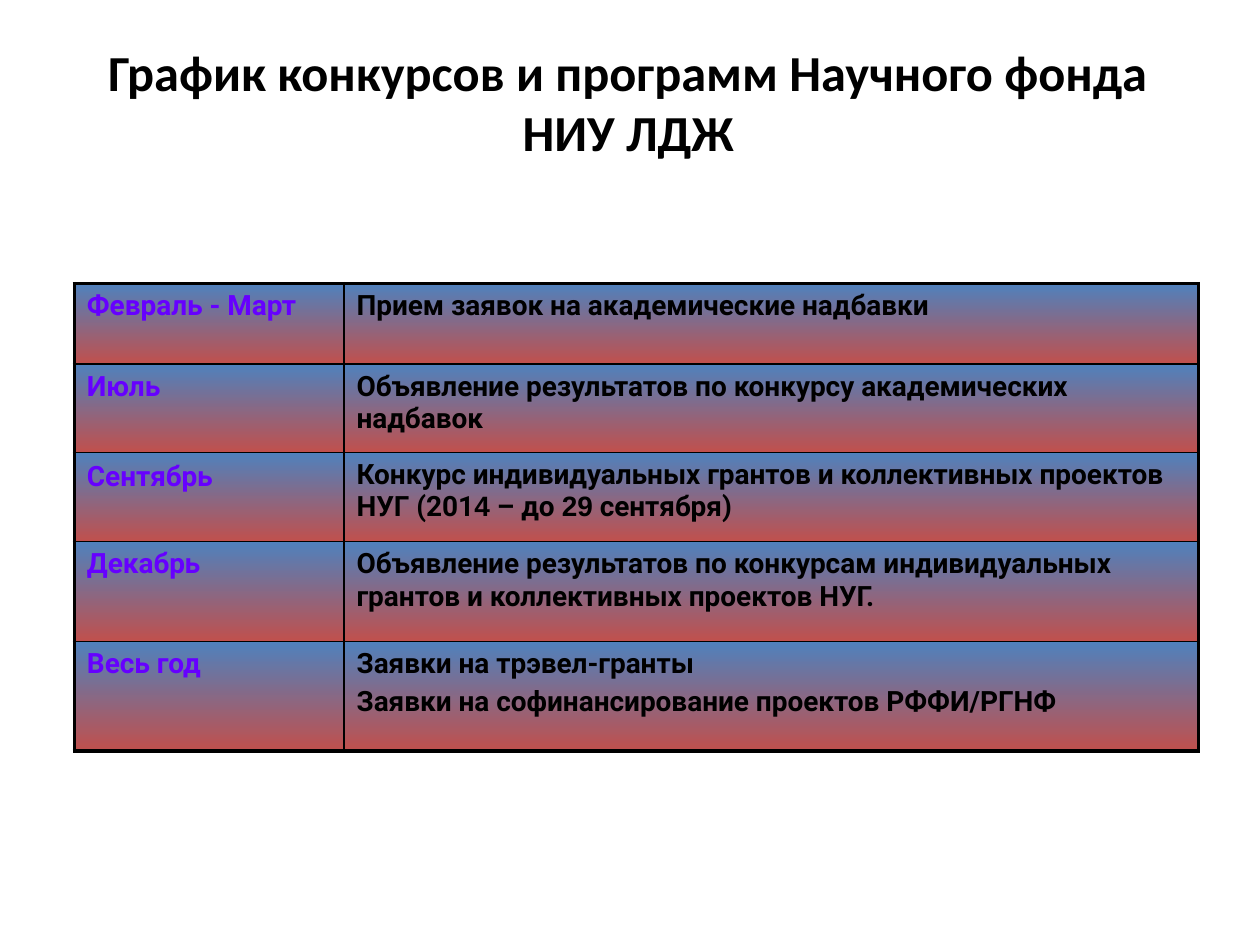
from lxml.etree import SubElement
from pptx import Presentation
from pptx.dml.color import RGBColor
from pptx.enum.text import MSO_ANCHOR, PP_ALIGN
from pptx.oxml.ns import qn
from pptx.util import Inches, Pt

BLACK = RGBColor(0x00, 0x00, 0x00)
VIOLET = RGBColor(0x66, 0x00, 0xFF)
BLUE = RGBColor(0x4F, 0x81, 0xBD)
RED = RGBColor(0xC0, 0x50, 0x4D)

TITLE = "График конкурсов и программ Научного фонда НИУ ЛДЖ"
TITLE_FONT = {"name": "Calibri", "size": Pt(28.8), "bold": True}
CELL_FONT = {"name": "Roboto", "size": Pt(16), "bold": True}
COLUMNS = (2.14, 6.78)
ROWS = (0.64, 0.7, 0.71, 0.79, 0.87)
THIN, THICK = Pt(1), Pt(2.25)

# Each row: period, then paragraphs; a paragraph is a list of (text, font name) runs
SCHEDULE = [
    ("Февраль - Март", [[("Прием заявок на академические надбавки", "Roboto")]]),
    ("Июль", [[("Объявление результатов по конкурсу академических надбавок", "Roboto")]]),
    ("Сентябрь", [[
        ("Конкурс индивидуальных грантов и коллективных проектов НУГ (201", "Roboto"),
        ("4", "Arial"), (" – до ", "Roboto"), ("29", "Arial"), (" сентября)", "Roboto"),
    ]]),
    ("Декабрь", [[("Объявление результатов по конкурсам индивидуальных грантов "
                   "и коллективных проектов НУГ.", "Roboto")]]),
    ("Весь год", [[("Заявки на трэвел-гранты", "Roboto")],
                  [("Заявки на софинансирование проектов РФФИ/РГНФ", "Roboto")]]),
]


def add_run(p, text, color, fmt):
    r = p.add_run()
    r.text = text
    for name, value in fmt.items():
        setattr(r.font, name, value)
    r.font.color.rgb = color


def add_title(slide):
    tf = slide.shapes.add_textbox(Inches(0.6), Inches(0.33), Inches(8.77), Inches(0.95)).text_frame
    tf.word_wrap = True
    tf.vertical_anchor = MSO_ANCHOR.MIDDLE
    p = tf.paragraphs[0]
    p.alignment = PP_ALIGN.CENTER
    add_run(p, TITLE, BLACK, TITLE_FONT)


def set_borders(cell, widths):
    """Draw black cell borders; widths maps the side letters L, R, T, B to line widths."""
    tc_pr = cell._tc.get_or_add_tcPr()
    for side, width in widths.items():
        ln = SubElement(tc_pr, qn(f"a:ln{side}"), w=str(width))
        fill = SubElement(ln, qn("a:solidFill"))
        SubElement(fill, qn("a:srgbClr"), val=str(BLACK))


def fill_gradient(cell):
    cell.fill.gradient()
    cell.fill.gradient_angle = 270
    for stop, (position, color) in zip(cell.fill.gradient_stops, ((0, BLUE), (1, RED))):
        stop.position = position
        stop.color.rgb = color


def write_cell(cell, paragraphs, color):
    tf = cell.text_frame
    for i, runs in enumerate(paragraphs):
        p = tf.add_paragraph() if i else tf.paragraphs[0]
        p.space_before = Pt(3.2)
        for text, font in runs:
            add_run(p, text, color, CELL_FONT | {"name": font})
    return tf


def add_schedule(slide):
    last_row, last_col = len(ROWS) - 1, len(COLUMNS) - 1
    table = slide.shapes.add_table(
        len(ROWS), len(COLUMNS), Inches(0.59), Inches(2.25),
        Inches(sum(COLUMNS)), Inches(sum(ROWS))).table
    table.first_row = table.horz_banding = False
    for column, width in zip(table.columns, COLUMNS):
        column.width = Inches(width)
    for i, (height, (period, events)) in enumerate(zip(ROWS, SCHEDULE)):
        table.rows[i].height = Inches(height)
        contents = (([[(period, "Roboto")]], VIOLET), (events, BLACK))
        for j, (paragraphs, color) in enumerate(contents):
            cell = table.cell(i, j)
            set_borders(cell, {
                "L": THICK if j == 0 else THIN,
                "R": THICK if j == last_col else THIN,
                "T": THICK if i == 0 else THIN,
                "B": THICK if i == last_row else THIN,
            })
            fill_gradient(cell)
            tf = write_cell(cell, paragraphs, color)
            if period == "Сентябрь" and j == 0:
                tf.paragraphs[0].line_spacing = 1.05


def main():
    prs = Presentation()
    prs.slide_width, prs.slide_height = Inches(10), Inches(7.5)
    slide = prs.slides.add_slide(prs.slide_layouts[6])
    add_title(slide)
    add_schedule(slide)
    prs.save("out.pptx")


if __name__ == "__main__":
    main()
